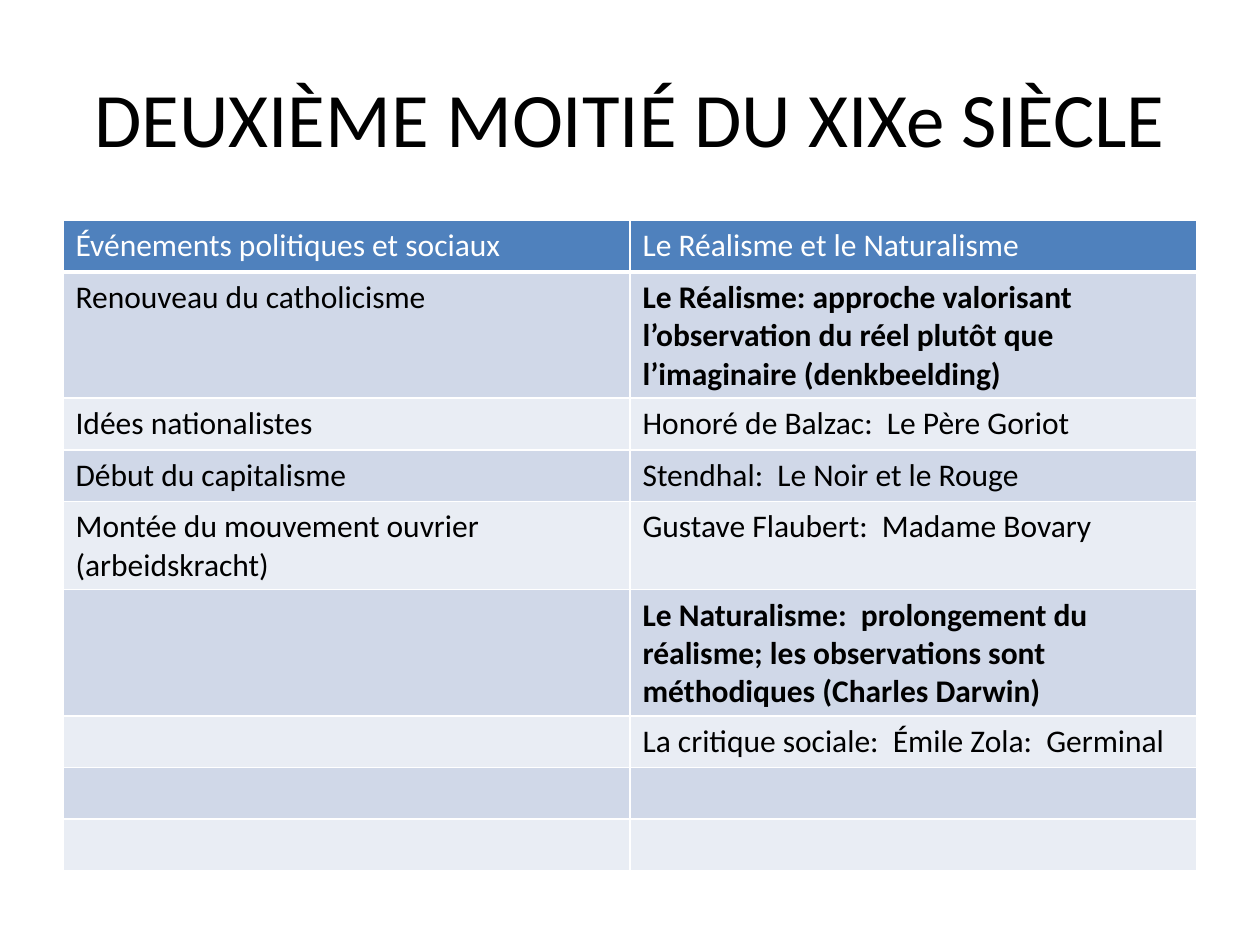
"""Build a slide that sets social events beside Realism and Naturalism."""
from dataclasses import dataclass

from lxml import etree
from pptx import Presentation
from pptx.dml.color import RGBColor
from pptx.enum.text import MSO_ANCHOR, PP_ALIGN
from pptx.oxml.ns import qn
from pptx.util import Inches, Pt

MIDDLE = MSO_ANCHOR.MIDDLE
CENTER = PP_ALIGN.CENTER


@dataclass(frozen=True)
class Theme:
    font: str = "Calibri"
    title_size: int = 44
    cell_size: int = 18
    ink: str = "000000"
    white: str = "FFFFFF"
    header: str = "4F81BD"
    bands: tuple = ("D0D8E8", "E9EDF4")


THEME = Theme()
TITLE = "DEUXIÈME MOITIÉ DU XIXe SIÈCLE"
ROWS = [
    ("Événements politiques et sociaux", "Le Réalisme et le Naturalisme"),
    (
        "Renouveau du catholicisme",
        "Le Réalisme: approche valorisant l’observation du réel plutôt que "
        "l’imaginaire (denkbeelding)",
    ),
    ("Idées nationalistes", "Honoré de Balzac:  Le Père Goriot"),
    ("Début du capitalisme", "Stendhal:  Le Noir et le Rouge"),
    ("Montée du mouvement ouvrier (arbeidskracht)", "Gustave Flaubert:  Madame Bovary"),
    (
        "",
        "Le Naturalisme:  prolongement du réalisme; les observations sont "
        "méthodiques (Charles Darwin)",
    ),
    ("", "La critique sociale:  Émile Zola:  Germinal"),
    ("", ""),
    ("", ""),
]
DEFINITIONS = ("Le Réalisme:", "Le Naturalisme:")


def style_paragraph(para, size, color, bold=False):
    para.font.name = THEME.font
    para.font.size = Pt(size)
    para.font.bold = bold
    para.font.color.rgb = RGBColor.from_string(color)


def add_borders(cell, bottom_width):
    properties = cell._tc.get_or_add_tcPr()
    for side, width in (("L", 1), ("R", 1), ("T", 1), ("B", bottom_width)):
        line = etree.SubElement(properties, qn(f"a:ln{side}"), w=str(Pt(width)))
        fill = etree.SubElement(line, qn("a:solidFill"))
        etree.SubElement(fill, qn("a:srgbClr"), val=THEME.white)


deck = Presentation()
deck.slide_width = Inches(10)
deck.slide_height = Inches(7.5)
page = deck.slides.add_slide(deck.slide_layouts[6])

title_box = page.shapes.add_textbox(Inches(0.5), Inches(0.3), Inches(9), Inches(1.25))
title_frame = title_box.text_frame
title_frame.word_wrap = True
title_frame.vertical_anchor = MIDDLE
title_frame.text = TITLE
title_para = title_frame.paragraphs[0]
title_para.alignment = CENTER
style_paragraph(title_para, THEME.title_size, THEME.ink)

row_height = Inches(0.41)
table = page.shapes.add_table(
    len(ROWS), 2, Inches(0.5), Inches(1.75), Inches(9), row_height * len(ROWS)
).table
for row_index, texts in enumerate(ROWS):
    is_header = row_index == 0
    table.rows[row_index].height = row_height
    fill_color = THEME.header if is_header else THEME.bands[(row_index - 1) % 2]
    text_color = THEME.white if is_header else THEME.ink
    for column_index, text in enumerate(texts):
        cell = table.cell(row_index, column_index)
        add_borders(cell, 3 if is_header else 1)
        cell.fill.solid()
        cell.fill.fore_color.rgb = RGBColor.from_string(fill_color)
        cell.text = text
        style_paragraph(
            cell.text_frame.paragraphs[0],
            THEME.cell_size,
            text_color,
            text.startswith(DEFINITIONS),
        )

deck.save("out.pptx")
